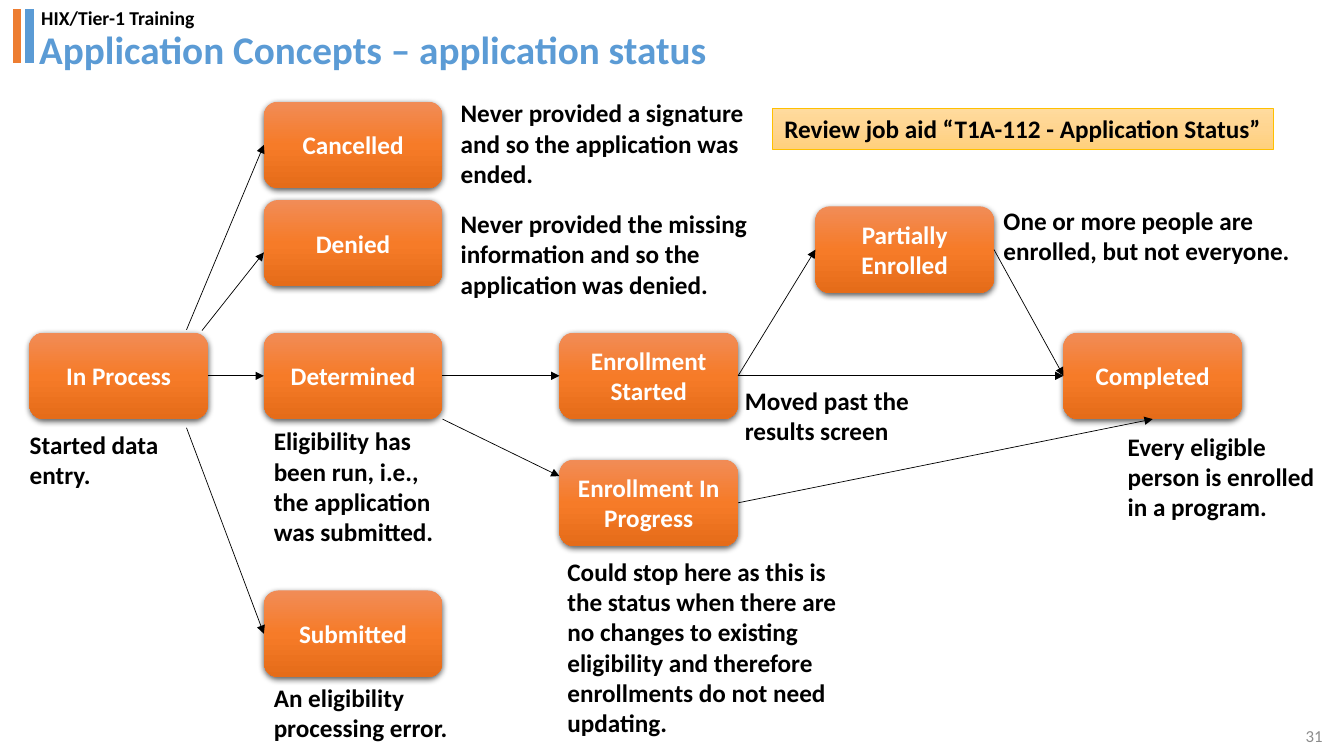
"""Build the application status flow slide."""
from copy import deepcopy

from lxml.etree import SubElement
from pptx import Presentation
from pptx.dml.color import RGBColor
from pptx.enum.shapes import MSO_CONNECTOR, MSO_SHAPE
from pptx.enum.text import MSO_ANCHOR as Anchor, PP_ALIGN as Align
from pptx.oxml.ns import qn
from pptx.util import Cm, Pt

COLORS = {
    "black": "000000", "white": "FFFFFF", "blue": "5B9BD5",
    "orange": "ED7D31", "gray": "8C8C8C", "gold": "FFC000",
}
STATUS_GRADIENT = ("F18C57", "F67B28", "E56C19")
NOTICE_GRADIENT = ("FFDB9E", "FFD590", "FFD07C")
STATUS_WIDTH, STATUS_HEIGHT = 4.5, 2.18
TOP, LEFT, BOTTOM, RIGHT = range(4)

STATUSES = {
    "Determined": (6.65, 8.38),
    "Submitted": (6.65, 14.88),
    "Denied": (6.65, 5.04),
    "Cancelled": (6.65, 2.56),
    "In Process": (0.74, 8.38),
    "Enrollment Started": (14.1, 8.38),
    "Enrollment In Progress": (14.1, 11.58),
    "Completed": (26.8, 8.38),
    "Partially Enrolled": (20.55, 5.2),
}
ARROWS = [
    (("In Process", RIGHT), ("Determined", LEFT)),
    (("Determined", RIGHT), ("Enrollment Started", LEFT)),
    (("Enrollment Started", RIGHT), ("Partially Enrolled", LEFT)),
    (("Partially Enrolled", RIGHT), ("Completed", LEFT)),
    ((4.7, 10.78), ("Submitted", LEFT)),
    ((5.09, 8.33), (6.65, 6.36)),
    ((4.7, 8.31), ("Cancelled", LEFT)),
    ((11.15, 10.56), (14.1, 12)),
    (("Enrollment In Progress", RIGHT), ("Completed", BOTTOM)),
    (("Enrollment Started", RIGHT), ("Completed", LEFT)),
]
NOTES = [
    ("Never provided a signature and so the application was ended.",
     (11.36, 2.34, 7.87, 2.57)),
    ("Never provided the missing information and so the application was denied.",
     (11.36, 5.13, 7.87, 2.57)),
    ("An eligibility\nprocessing error.", (6.65, 17.07, 5.41, 1.8)),
    ("Could stop here as this is the status when there are no changes to existing "
     "eligibility and therefore enrollments do not need updating.",
     (14.05, 13.89, 7.87, 4.88)),
    ("Eligibility has been run, i.e., the application was submitted.",
     (6.65, 10.6, 4.72, 3.33)),
    ("Started data entry.", (0.5, 10.69, 4.72, 1.8)),
    ("Moved past the results screen", (18.52, 9.58, 5.41, 1.8)),
    ("One or more people are enrolled, but not everyone.", (25.04, 5.04, 8.53, 1.8)),
    ("Every eligible person is enrolled in a program.", (28.17, 10.74, 5.41, 2.57)),
]


def color(name):
    """Return the named colour."""
    return RGBColor.from_string(COLORS[name])


def write_text(shape, text, size=18, tint="black", bold=True, align=Align.LEFT,
               anchor=Anchor.TOP, wrap=True):
    """Write formatted text, one paragraph for each line."""
    frame = shape.text_frame
    frame.text = text
    frame.word_wrap = wrap
    frame.vertical_anchor = anchor
    for paragraph in frame.paragraphs:
        paragraph.alignment = align
        font = paragraph.font
        font.name, font.size, font.bold = "Calibri", Pt(size), bold
        font.color.rgb = color(tint)


def add_text(slide, text, box, **style):
    """Add a text box and return it."""
    shape = slide.shapes.add_textbox(*map(Cm, box))
    write_text(shape, text, **style)
    return shape


def add_gradient_shape(slide, kind, box, gradient):
    """Add a shape with a three-stop gradient running downwards."""
    shape = slide.shapes.add_shape(kind, *map(Cm, box))
    shape.shadow.inherit = False
    shape.fill.gradient()
    shape.fill.gradient_angle = 270
    stops = shape._element.spPr.find(f".//{qn('a:gsLst')}")
    stops.insert(1, deepcopy(stops[0]))
    for index, stop in enumerate(shape.fill.gradient_stops):
        stop.position = index / 2
        stop.color.rgb = RGBColor.from_string(gradient[index])
    return shape


def add_shadow(shape):
    """Give the shape a soft shadow below it."""
    effects = shape._element.spPr.find(qn("a:effectLst"))
    shadow = SubElement(effects, qn("a:outerShdw"), blurRad=str(Pt(4.5)),
                        dist=str(Pt(1.5)), dir="5400000", rotWithShape="0")
    tint = SubElement(shadow, qn("a:srgbClr"), val=COLORS["black"])
    SubElement(tint, qn("a:alpha"), val="63000")


def add_status(slide, name, position):
    """Add a status box and return it."""
    box = (*position, STATUS_WIDTH, STATUS_HEIGHT)
    shape = add_gradient_shape(slide, MSO_SHAPE.ROUNDED_RECTANGLE, box, STATUS_GRADIENT)
    shape.line.fill.background()
    add_shadow(shape)
    write_text(shape, name, tint="white", align=Align.CENTER, anchor=Anchor.MIDDLE)
    return shape


def add_notice(slide, text, box):
    """Add the highlighted notice."""
    shape = add_gradient_shape(slide, MSO_SHAPE.RECTANGLE, box, NOTICE_GRADIENT)
    shape.line.color.rgb = color("gold")
    shape.line.width = Pt(0.5)
    write_text(shape, text, align=Align.CENTER, wrap=False)


def add_line(slide, begin, end, tint, width):
    """Add a straight line without shadow and return it."""
    line = slide.shapes.add_connector(MSO_CONNECTOR.STRAIGHT, *map(Cm, (*begin, *end)))
    line.line.color.rgb = color(tint)
    line.line.width = Pt(width)
    SubElement(line._element.spPr, qn("a:effectLst"))
    return line


def add_arrow(slide, boxes, begin, end):
    """Add an arrow whose ends are points or sides of status boxes."""
    points = [(0, 0) if place[0] in boxes else place for place in (begin, end)]
    arrow = add_line(slide, *points, "black", 0.5)
    for (name, side), connect in ((begin, arrow.begin_connect), (end, arrow.end_connect)):
        if name in boxes:
            connect(boxes[name], side)
    SubElement(arrow.line._get_or_add_ln(), qn("a:tailEnd"), type="triangle")


def add_header(slide):
    """Add the accent bars, the course name, the title and the slide number."""
    for x, tint in ((0.74, "blue"), (0.43, "orange")):
        add_line(slide, (x, 0.23), (x, 1.6), tint, 6)
    add_text(slide, "HIX/Tier-1 Training", (0.79, 0.03, 6.07, 0.86), size=14)
    title = add_text(slide, "Application Concepts – application status",
                     (0.74, 0.76, 29.62, 1.09), size=28, tint="blue",
                     anchor=Anchor.MIDDLE)
    title.text_frame.paragraphs[0].line_spacing = 0.9
    add_text(slide, "31", (31.78, 18.21, 1.8, 0.64), size=12, tint="gray", bold=False,
             align=Align.RIGHT, anchor=Anchor.MIDDLE)


def main():
    """Build and save the presentation."""
    presentation = Presentation()
    presentation.slide_width, presentation.slide_height = Cm(33.87), Cm(19.05)
    slide = presentation.slides.add_slide(presentation.slide_layouts[6])
    add_header(slide)
    boxes = {name: add_status(slide, name, place) for name, place in STATUSES.items()}
    for begin, end in ARROWS:
        add_arrow(slide, boxes, begin, end)
    for text, box in NOTES:
        add_text(slide, text, box)
    add_notice(slide, "Review job aid “T1A-112 - Application Status”",
               (19.46, 2.74, 12.62, 1.02))
    presentation.save("out.pptx")


if __name__ == "__main__":
    main()
